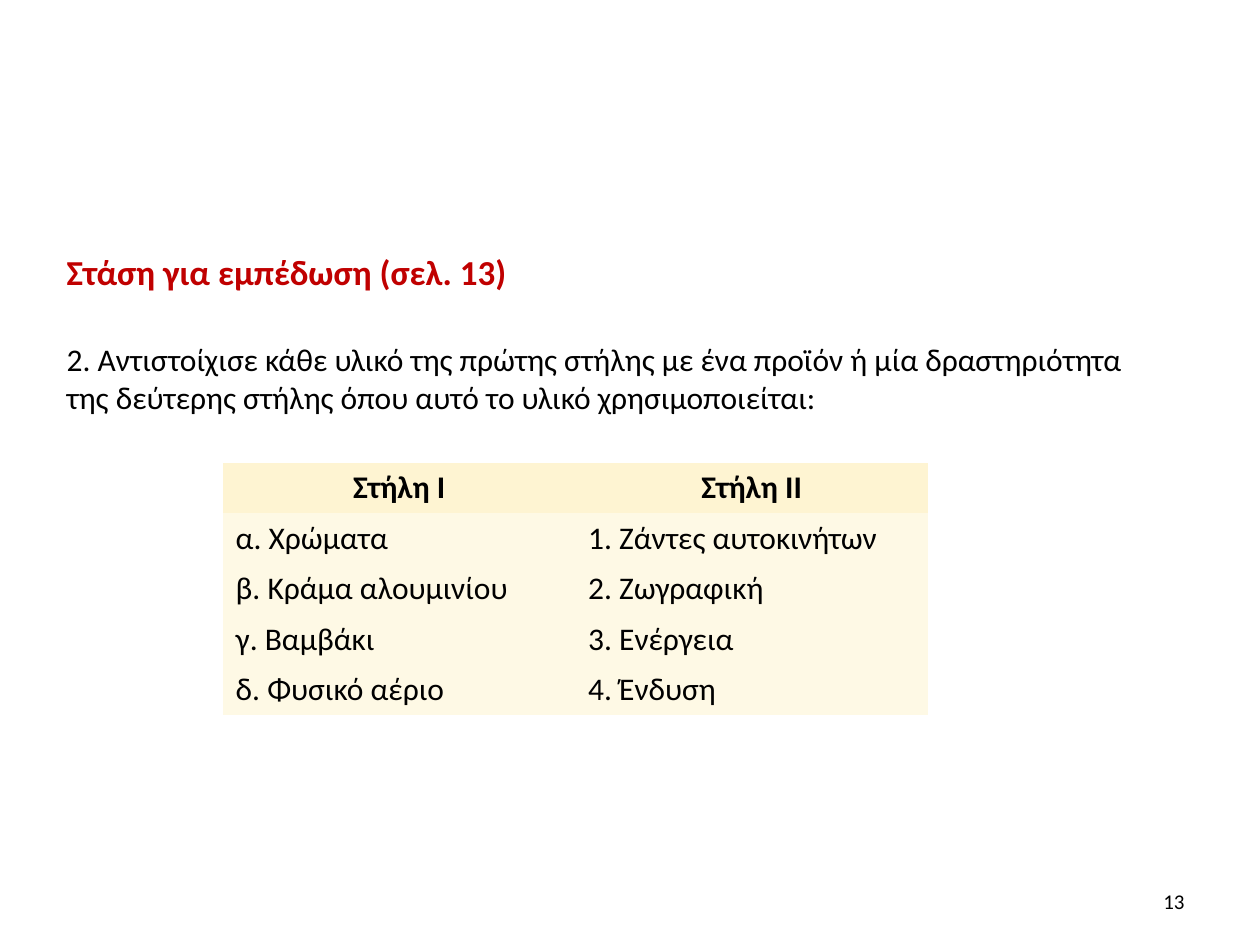
import pptx
import pptx.dml.color
import pptx.enum.text
import pptx.oxml.ns
import pptx.util

Pt = pptx.util.Pt
ALIGN = pptx.enum.text.PP_ALIGN
ANCHOR = pptx.enum.text.MSO_ANCHOR

BLACK = "000000"
RED = "C00000"
HEADER_FILL = "FEF4D2"
BODY_FILL = "FEF9E5"
NO_STYLE_NO_GRID = "{2D5ABB26-0587-4C30-8999-92F81FD0307C}"

MATCHING_ROWS = [
    ("Στήλη Ι", "Στήλη ΙΙ"),
    ("α. Χρώματα", "1. Ζάντες αυτοκινήτων"),
    ("β. Κράμα αλουμινίου", "2. Ζωγραφική"),
    ("γ. Βαμβάκι", "3. Ενέργεια"),
    ("δ. Φυσικό αέριο", "4. Ένδυση"),
]


def color(hex_string):
    return pptx.dml.color.RGBColor.from_string(hex_string)


def write_text(text_frame, text, size, hex_color=BLACK, bold=False, align=ALIGN.LEFT):
    text_frame.text = text
    paragraph = text_frame.paragraphs[0]
    paragraph.alignment = align
    font = paragraph.runs[0].font
    font.name = "Calibri"
    font.size = Pt(size)
    font.bold = bold
    font.color.rgb = color(hex_color)


def add_text(slide, box, text, size, anchor=ANCHOR.TOP, wrap=True, **style):
    shape = slide.shapes.add_textbox(*map(Pt, box))
    text_frame = shape.text_frame
    text_frame.word_wrap = wrap
    text_frame.vertical_anchor = anchor
    write_text(text_frame, text, size, **style)


def add_matching_table(slide, box, rows):
    """Fill the box with equal rows and columns; the first row is the header."""
    left, top, width, height = box
    column_count = len(rows[0])
    frame = slide.shapes.add_table(len(rows), column_count, *map(Pt, box))
    table = frame.table
    style_id = table._tbl.tblPr.find(pptx.oxml.ns.qn("a:tableStyleId"))
    style_id.text = NO_STYLE_NO_GRID
    for column in table.columns:
        column.width = Pt(width / column_count)
    for row_index, texts in enumerate(rows):
        is_header = row_index == 0
        table.rows[row_index].height = Pt(height / len(rows))
        for column_index, text in enumerate(texts):
            cell = table.cell(row_index, column_index)
            cell.vertical_anchor = ANCHOR.MIDDLE
            cell.fill.solid()
            cell.fill.fore_color.rgb = color(HEADER_FILL if is_header else BODY_FILL)
            write_text(cell.text_frame, text, 18, bold=is_header,
                       align=ALIGN.CENTER if is_header else ALIGN.LEFT)


def main():
    presentation = pptx.Presentation()
    presentation.slide_width = Pt(720)
    presentation.slide_height = Pt(540)
    slide = presentation.slides.add_slide(presentation.slide_layouts[6])

    add_text(slide, (31, 139.7, 273, 31.5), "Στάση για εμπέδωση (σελ. 13)", 20,
             wrap=False, hex_color=RED, bold=True)
    add_text(slide, (516, 500.5, 168, 28.75), "13", 12,
             anchor=ANCHOR.MIDDLE, align=ALIGN.RIGHT)
    add_text(slide, (31, 190.8, 635, 51),
             "2.\u00a0Αντιστοίχισε κάθε υλικό της πρώτης στήλης με ένα προϊόν ή μία "
             "δραστηριότητα της δεύτερης στήλης όπου αυτό το υλικό χρησιμοποιείται:", 18)
    add_matching_table(slide, (127.5, 264.4, 402.8, 144), MATCHING_ROWS)

    presentation.save("out.pptx")


if __name__ == "__main__":
    main()
